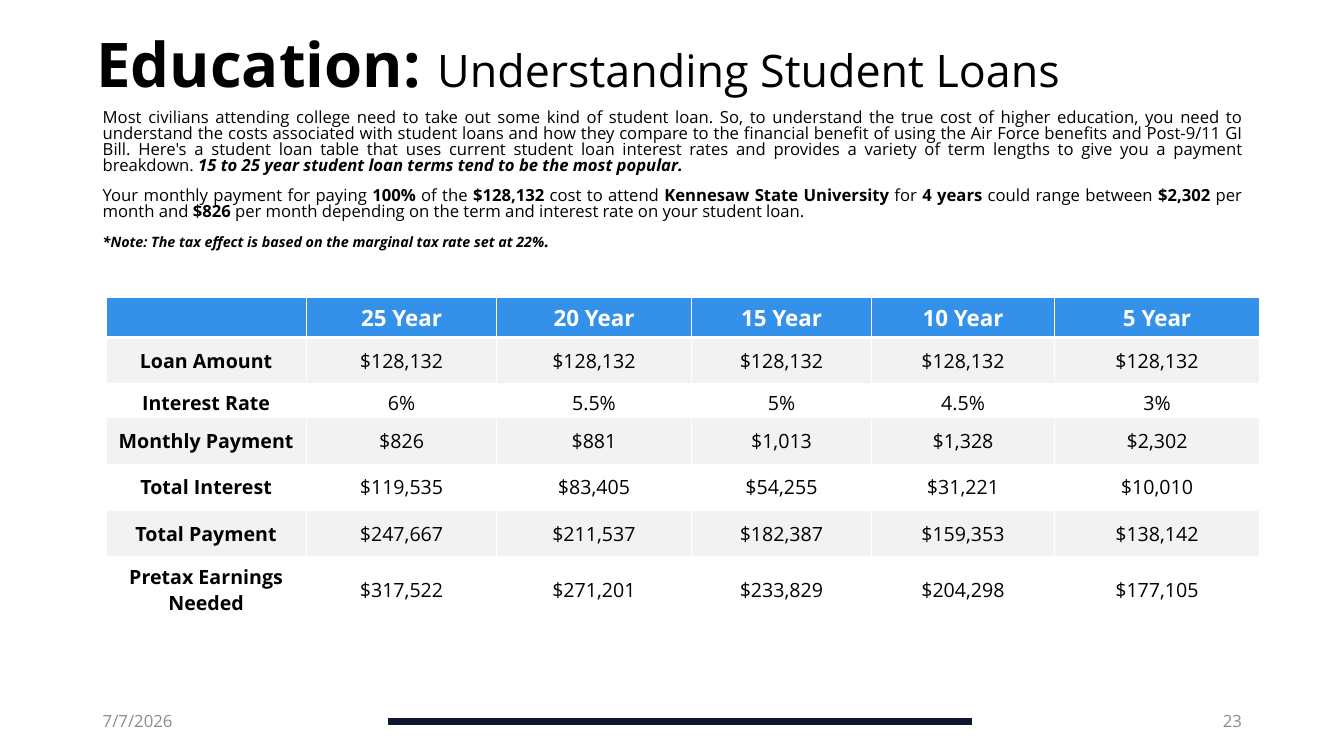
from lxml.etree import SubElement
from pptx import Presentation
from pptx.dml.color import RGBColor
from pptx.enum.shapes import MSO_SHAPE
from pptx.enum.text import MSO_ANCHOR, PP_ALIGN
from pptx.oxml.ns import qn
from pptx.util import Cm, Pt

COLORS = {"black": "000000", "white": "FFFFFF", "navy": "0E182D",
          "blue": "3491E9", "band": "F2F2F2", "gray": "8C8C8C"}
FONT = "Open Sans"


def add_runs(p, runs, size, color):
    """Add (text, font changes) runs to a paragraph."""
    for text, changes in runs:
        r = p.add_run()
        r.text = text
        r.font.color.rgb = RGBColor.from_string(COLORS[color])
        for name, value in ({"name": FONT, "size": Pt(size)} | changes).items():
            setattr(r.font, name, value)


def add_text(box, paragraphs, size, color, anchor=MSO_ANCHOR.MIDDLE, **layout):
    """Add a wrapped text box; layout holds paragraph settings."""
    tf = s.shapes.add_textbox(*map(Cm, box)).text_frame
    tf.word_wrap = True
    tf.vertical_anchor = anchor
    for i, runs in enumerate(paragraphs):
        p = tf.add_paragraph() if i else tf.paragraphs[0]
        for name, value in layout.items():
            if i or name != "space_before":
                setattr(p, name, value)
        add_runs(p, runs, size, color)


prs = Presentation()
prs.slide_width, prs.slide_height = Cm(33.87), Cm(19.05)
s = prs.slides.add_slide(prs.slide_layouts[6])

# Footer bar
sp = s.shapes.add_shape(MSO_SHAPE.RECTANGLE, Cm(9.8), Cm(18.11), Cm(14.68), Cm(0.15))
sp.shadow.inherit = False
sp.fill.solid()
sp.fill.fore_color.rgb = RGBColor.from_string(COLORS["navy"])
sp.line.color.rgb = RGBColor.from_string(COLORS["navy"])
sp.line.width = Pt(1)

# Title
bold = {"bold": True}
bold_italic = {"bold": True, "italic": True}
add_text((2.18, 0.1, 29.34, 3.23),
         [[("Education: ", bold), ("Understanding Student Loans", {"size": Pt(32)})]],
         44, "black", line_spacing=0.9)

# Introduction
introduction = [
    [("Most civilians attending college need to take out some kind of student loan. "
      "So, to understand the true cost of higher education, you need to understand "
      "the costs associated with student loans and how they compare to the financial "
      "benefit of using the Air Force benefits and Post-9/11 GI Bill. Here's a student "
      "loan table that uses current student loan interest rates and provides a variety "
      "of term lengths to give you a payment breakdown. ", {}),
     ("15 to 25 year student loan terms tend to be the most popular.", bold_italic)],
    [("Your monthly payment for paying ", {}), ("100%", bold), (" of the ", {}),
     ("$128,132", bold), (" cost to attend ", {}),
     ("Kennesaw State University", bold), (" for ", {}), ("4 years", bold),
     (" could range between ", {}), ("$2,302", bold), (" per month and ", {}),
     ("$826", bold),
     (" per month depending on the term and interest rate on your student loan.", {})],
    [("*Note: The tax effect is based on the marginal tax rate set at 22%",
      bold_italic | {"size": Pt(10.2)}), (".", bold_italic)],
]
add_text((2.34, 2.67, 29.21, 4.62), introduction, 11.9, "black", MSO_ANCHOR.TOP,
         alignment=PP_ALIGN.JUSTIFY, line_spacing=0.8, space_before=Pt(10))

# Date and slide number
for left, text, align in ((2.34, "7/7/2026", PP_ALIGN.LEFT), (23.93, "23", PP_ALIGN.RIGHT)):
    add_text((left, 17.65, 7.62, 1.02), [[(text, {})]], 12, "gray", alignment=align)

# Loan table
loans = [
    ["", "25 Year", "20 Year", "15 Year", "10 Year", "5 Year"],
    ["Loan Amount"] + ["$128,132"] * 5,
    ["Interest Rate", "6%", "5.5%", "5%", "4.5%", "3%"],
    ["Monthly Payment", "$826", "$881", "$1,013", "$1,328", "$2,302"],
    ["Total Interest", "$119,535", "$83,405", "$54,255", "$31,221", "$10,010"],
    ["Total Payment", "$247,667", "$211,537", "$182,387", "$159,353", "$138,142"],
    ["Pretax Earnings Needed", "$317,522", "$271,201", "$233,829", "$204,298", "$177,105"],
]
widths = [5.05, 4.8, 4.9, 4.55, 4.6, 5.18]
heights = [0.74, 1.17, 0.69, 1.17, 1.17, 1.17, 1.65]
table = s.shapes.add_table(len(heights), len(widths), Cm(2.67), Cm(7.49),
                           Cm(sum(widths)), Cm(sum(heights))).table
for column, width in zip(table.columns, widths):
    column.width = Cm(width)
for i, (row, height) in enumerate(zip(loans, heights)):
    table.rows[i].height = Cm(height)
    header = i == 0
    fill = "blue" if header else "band" if i % 2 else "white"
    for j, text in enumerate(row):
        cell = table.cell(i, j)
        cell.vertical_anchor = MSO_ANCHOR.MIDDLE
        # White borders, thicker under the header
        for side in "LRTB":
            thick = (header and side == "B") or (i == 1 and side == "T")
            ln = SubElement(cell._tc.get_or_add_tcPr(), qn(f"a:ln{side}"),
                            w=str(Pt(3 if thick else 1)))
            SubElement(SubElement(ln, qn("a:solidFill")), qn("a:srgbClr"),
                       val=COLORS["white"])
        cell.fill.solid()
        cell.fill.fore_color.rgb = RGBColor.from_string(COLORS[fill])
        p = cell.text_frame.paragraphs[0]
        p.alignment = PP_ALIGN.CENTER
        if text:
            add_runs(p, [(text, {"bold": header or j == 0})],
                     16 if header else 14, "white" if header else "black")

prs.save("out.pptx")
